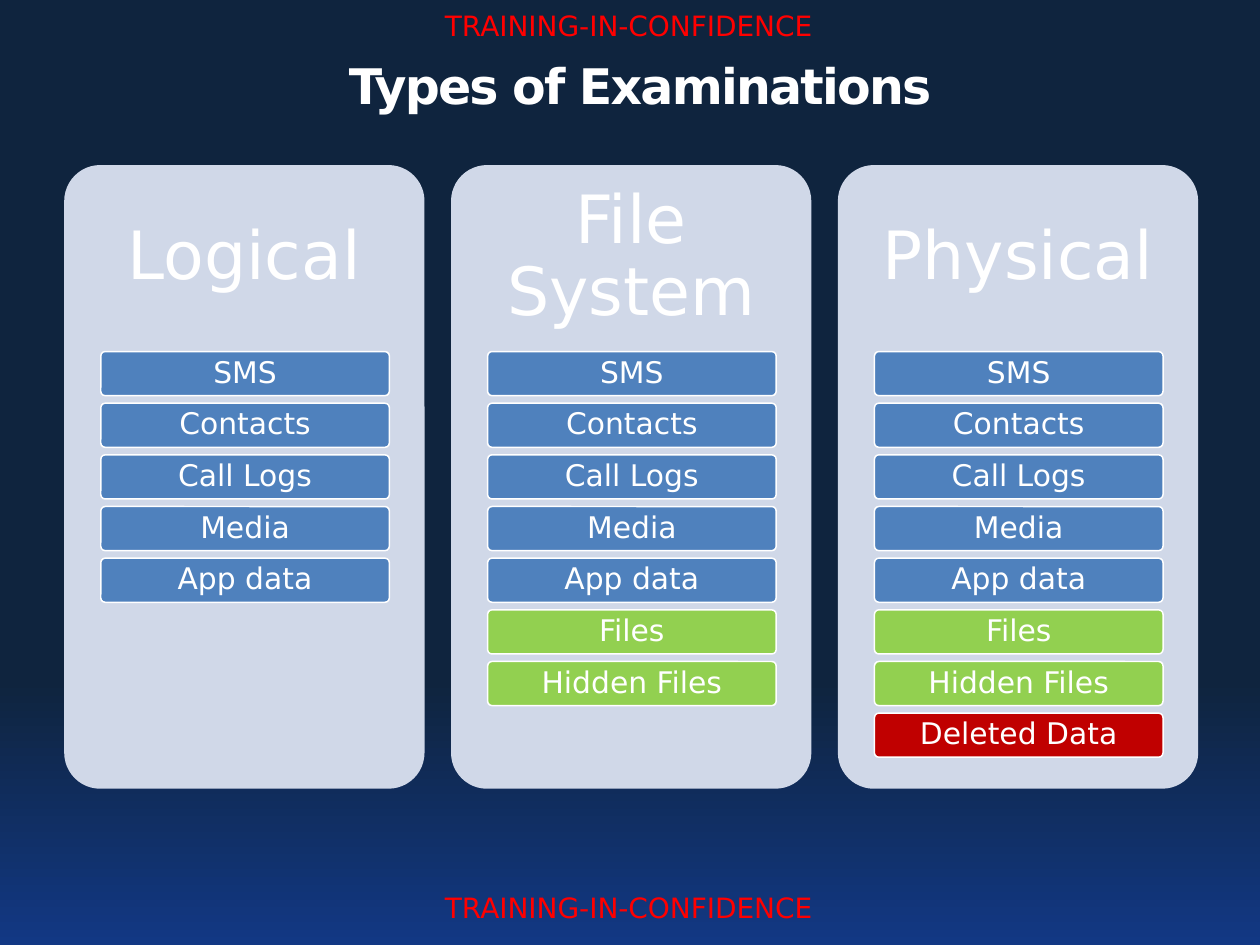
import copy
from dataclasses import dataclass

import pptx
import pptx.dml.color
import pptx.enum.shapes
import pptx.enum.text
import pptx.util

Inches = pptx.util.Inches
Anchor = pptx.enum.text.MSO_ANCHOR
Align = pptx.enum.text.PP_ALIGN


@dataclass(frozen=True)
class Theme:
    """Colours, font and type sizes of the slide."""
    font: str = "DejaVu Sans"
    night: str = "0F243E"
    royal: str = "123884"
    white: str = "FFFFFF"
    marking: str = "FF0000"
    panel: str = "D0D8E8"
    basic: str = "4F81BD"
    files: str = "92D050"
    deleted: str = "C00000"
    marking_size: int = 16
    title_size: int = 28
    heading_size: int = 38
    item_size: int = 17


@dataclass(frozen=True)
class Grid:
    """Panel columns and item rows, in inches."""
    left: float = 0.51
    top: float = 1.31
    column_step: float = 3.07
    panel_width: float = 2.86
    panel_height: float = 4.95
    heading_height: float = 1.48
    item_indent: float = 0.29
    item_width: float = 2.29
    item_height: float = 0.35
    row_step: float = 0.41

    def column(self, number):
        """Return the left edge of a panel."""
        return self.left + number * self.column_step

    def row(self, number):
        """Return the top edge of an item."""
        return self.top + self.heading_height + number * self.row_step


THEME = Theme()
GRID = Grid()
BASIC_ITEMS = [(name, THEME.basic) for name in
               ("SMS", "Contacts", "Call Logs", "Media", "App data")]
FILE_ITEMS = [(name, THEME.files) for name in ("Files", "Hidden Files")]
DELETED_ITEMS = [("Deleted Data", THEME.deleted)]
EXAMINATIONS = [
    ("Logical", BASIC_ITEMS),
    ("File System", BASIC_ITEMS + FILE_ITEMS),
    ("Physical", BASIC_ITEMS + FILE_ITEMS + DELETED_ITEMS),
]


def rgb(code):
    """Turn a hex code into a colour."""
    return pptx.dml.color.RGBColor.from_string(code)


def paint_background(slide):
    """Fill the slide with the night-to-royal gradient."""
    fill = slide.background.fill
    fill.gradient()
    fill.gradient_angle = 270
    middle, end = fill.gradient_stops
    middle.color.rgb, middle.position = rgb(THEME.night), 0.72
    end.color.rgb, end.position = rgb(THEME.royal), 1
    stops = fill._fill._gradFill.gsLst
    stops.insert(0, copy.deepcopy(stops[0]))
    fill.gradient_stops[0].position = 0


def write(holder, text, *, size, color=THEME.white, bold=False, align=Align.CENTER,
          anchor=Anchor.MIDDLE, margins=(0.1, 0.05), wrap=True, line_spacing=None,
          tracking=None):
    """Write one formatted paragraph into a shape or text box."""
    frame = holder.text_frame
    frame.word_wrap = wrap
    frame.vertical_anchor = anchor
    frame.margin_left = frame.margin_right = Inches(margins[0])
    frame.margin_top = frame.margin_bottom = Inches(margins[1])
    paragraph = frame.paragraphs[0]
    paragraph.alignment = align
    if line_spacing:
        paragraph.line_spacing = line_spacing
    run = paragraph.add_run()
    run.text = text
    run.font.name = THEME.font
    run.font.size = pptx.util.Pt(size)
    run.font.bold = bold
    run.font.color.rgb = rgb(color)
    if tracking:
        run.font._element.set("spc", str(tracking * 100))


def add_label(slide, box, text, **style):
    """Add a text box with formatted text."""
    label = slide.shapes.add_textbox(*map(Inches, box))
    write(label, text, **style)


def add_card(slide, box, color, outline=None):
    """Add a rounded rectangle and return it."""
    card = slide.shapes.add_shape(
        pptx.enum.shapes.MSO_SHAPE.ROUNDED_RECTANGLE, *map(Inches, box))
    card.adjustments[0] = 0.1
    card.shadow.inherit = False
    card.fill.solid()
    card.fill.fore_color.rgb = rgb(color)
    if outline:
        card.line.color.rgb = rgb(outline)
        card.line.width = pptx.util.Pt(0.85)
    else:
        card.line.fill.background()
    return card


def add_examination(slide, column, heading, items):
    """Add a panel with its heading and stacked items."""
    left = GRID.column(column)
    add_card(slide, (left, GRID.top, GRID.panel_width, GRID.panel_height), THEME.panel)
    add_label(slide, (left, GRID.top, GRID.panel_width, GRID.heading_height), heading,
              size=THEME.heading_size, margins=(0.16, 0.16), line_spacing=0.9)
    for row, (name, color) in enumerate(items):
        box = (left + GRID.item_indent, GRID.row(row), GRID.item_width, GRID.item_height)
        item = add_card(slide, box, color, outline=THEME.white)
        write(item, name, size=THEME.item_size, margins=(0.05, 0.04), line_spacing=0.9)


def main():
    """Build and save the slide."""
    deck = pptx.Presentation()
    deck.slide_width, deck.slide_height = Inches(10), Inches(7.5)
    slide = deck.slides.add_slide(deck.slide_layouts[6])
    paint_background(slide)
    for top in (0.02, 7.02):
        add_label(slide, (3.33, top, 3.32, 0.37), "TRAINING-IN-CONFIDENCE",
                  size=THEME.marking_size, color=THEME.marking, anchor=Anchor.TOP, wrap=False)
    add_label(slide, (2.67, 0.23, 5.04, 0.73), "Types of Examinations",
              size=THEME.title_size, bold=True, align=Align.LEFT,
              anchor=Anchor.BOTTOM, tracking=-1)
    for column, (heading, items) in enumerate(EXAMINATIONS):
        add_examination(slide, column, heading, items)
    deck.save("out.pptx")


if __name__ == "__main__":
    main()
